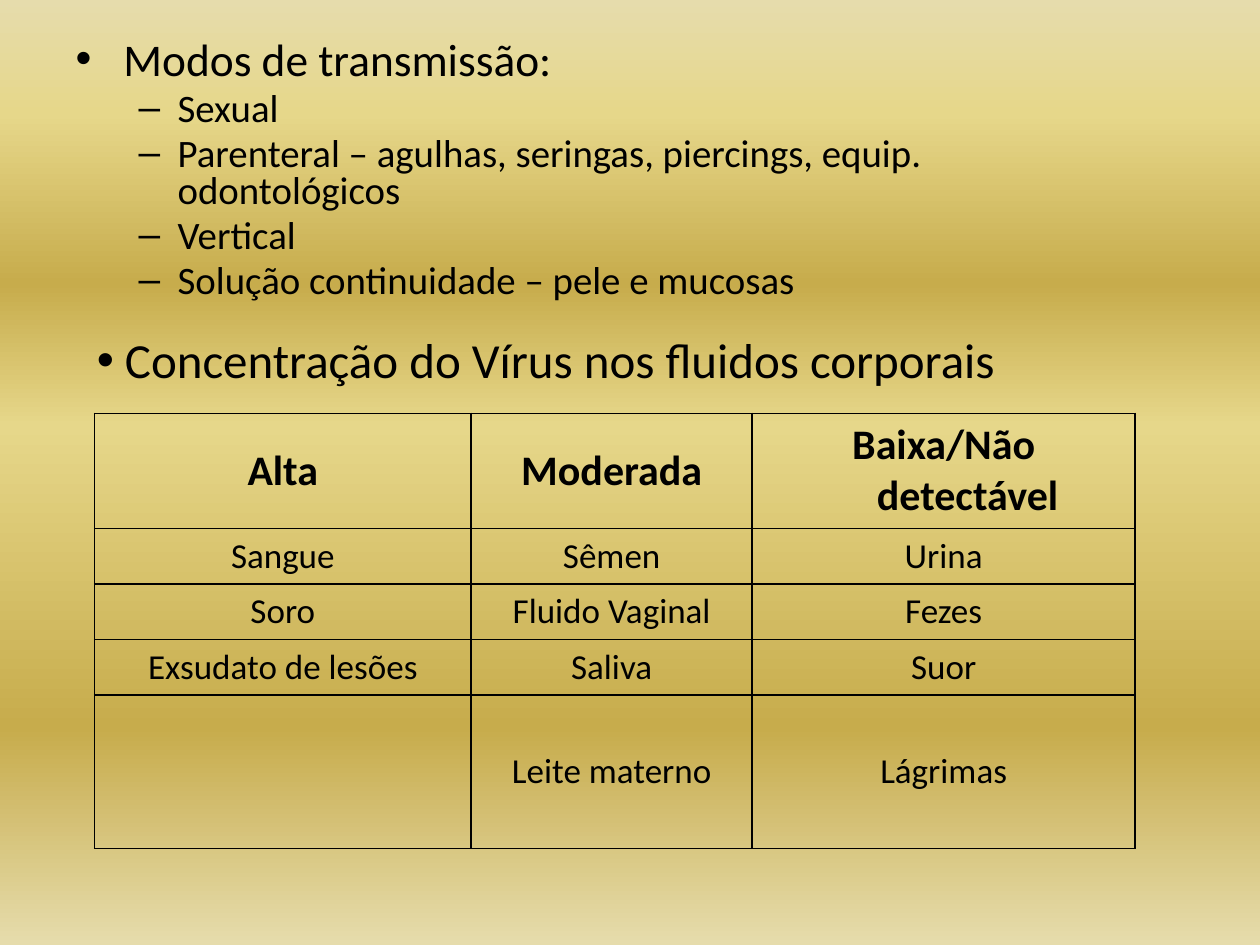
"""Build a slide on transmission routes and virus concentration in body fluids."""
from lxml import etree
from pptx import Presentation
from pptx import util as u
from pptx.dml.color import RGBColor
from pptx.enum import text
from pptx.oxml.ns import qn

COLORS = {"ink": "000000", "pale": "E6DCAC", "light": "E6D78A", "dark": "C7AC4C"}
BACKDROP = [(0, "pale"), (12, "light"), (30, "dark"), (45, "light"), (77, "dark"), (100, "pale")]
ROUTES = [
    (0, "Modos de transmissão:"),
    (1, "Sexual"),
    (1, "Parenteral – agulhas, seringas, piercings, equip. odontológicos"),
    (1, "Vertical"),
    (1, "Solução continuidade – pele e mucosas"),
]
LEVELS = [
    {"size": 25.9, "margin": 0.38, "hang": 0.38},
    {"size": 22.2, "margin": 0.81, "hang": 0.31},
]
HEADING = " Concentração do Vírus nos fluidos corporais"
FLUIDS = [
    ("Alta", "Moderada", "Baixa/Não detectável"),
    ("Sangue", "Sêmen", "Urina"),
    ("Soro", "Fluido Vaginal", "Fezes"),
    ("Exsudato de lesões", "Saliva", "Suor"),
    ("", "Leite materno", "Lágrimas"),
]
COLUMNS = [2.99, 2.23, 3.04]
ROWS = [0.91, 0.44, 0.44, 0.44, 1.22]


def style(paragraph, size, bold=False):
    for name, value in {"name": "Calibri", "size": u.Pt(size), "bold": bold}.items():
        setattr(paragraph.font, name, value)
    paragraph.font.color.rgb = RGBColor.from_string(COLORS["ink"])


def indent(paragraph, margin, hang):
    props = paragraph._p.get_or_add_pPr()
    props.set("marL", str(u.Inches(margin)))
    props.set("indent", str(-u.Inches(hang)))
    return props


def add_color(parent, color):
    etree.SubElement(parent, qn("a:srgbClr"), val=COLORS[color])


def paint_backdrop(slide):
    fill = slide.background.fill
    fill.gradient()
    fill.gradient_angle = 270
    stops = slide.element.find(".//" + qn("a:gsLst"))
    for stop in list(stops):
        stops.remove(stop)
    for share, color in BACKDROP:
        add_color(etree.SubElement(stops, qn("a:gs"), pos=str(share * 1000)), color)


def add_routes(slide):
    slide.shapes.title.element.getparent().remove(slide.shapes.title.element)
    body = slide.placeholders[1]
    box = {"left": 0.5, "top": 0.28, "width": 8.75, "height": 1.97}
    for side, length in box.items():
        setattr(body, side, u.Inches(length))
    frame = body.text_frame
    frame.auto_size = text.MSO_AUTO_SIZE.NONE
    frame.text = "\n".join(route for _, route in ROUTES)
    for paragraph, (level, _) in zip(frame.paragraphs, ROUTES):
        look = LEVELS[level]
        paragraph.level = level
        paragraph.line_spacing = 0.8
        paragraph.space_before = u.Pt(round(look["size"] * 0.2, 1))
        indent(paragraph, look["margin"], look["hang"])
        style(paragraph, look["size"])


def add_heading(slide):
    frame = slide.shapes.add_textbox(*map(u.Inches, (0.67, 2.57, 7.95, 0.57))).text_frame
    frame.word_wrap = True
    paragraph = frame.paragraphs[0]
    paragraph.text = HEADING
    style(paragraph, 28)
    props = indent(paragraph, 0, 0)
    bullet_font = etree.Element(qn("a:buFont"), typeface="Arial")
    bullet = etree.Element(qn("a:buChar"), char="•")
    props.insert(0, bullet_font)
    props.insert(1, bullet)


def outline(cell):
    props = cell._tc.get_or_add_tcPr()
    for place, side in enumerate(("lnL", "lnR", "lnT", "lnB")):
        line = etree.Element(qn("a:" + side), w=str(u.Pt(1)))
        add_color(etree.SubElement(line, qn("a:solidFill")), "ink")
        props.insert(place, line)


def add_fluids(slide):
    area = map(u.Inches, (0.75, 3.28, sum(COLUMNS), sum(ROWS)))
    table = slide.shapes.add_table(len(ROWS), len(COLUMNS), *area).table
    table.first_row = table.horz_banding = False
    for column, width in zip(table.columns, COLUMNS):
        column.width = u.Inches(width)
    for r, (names, height) in enumerate(zip(FLUIDS, ROWS)):
        table.rows[r].height = u.Inches(height)
        for c, name in enumerate(names):
            cell = table.cell(r, c)
            cell.text = name
            cell.vertical_anchor = text.MSO_ANCHOR.MIDDLE
            cell.fill.background()
            outline(cell)
            paragraph = cell.text_frame.paragraphs[0]
            paragraph.alignment = text.PP_ALIGN.CENTER
            indent(paragraph, 0.38, 0.38)
            style(paragraph, 20 if r else 24, bold=r == 0)


def main():
    deck = Presentation()
    deck.slide_width, deck.slide_height = u.Inches(10), u.Inches(7.5)
    slide = deck.slides.add_slide(deck.slide_layouts[1])
    paint_backdrop(slide)
    add_routes(slide)
    add_fluids(slide)
    add_heading(slide)
    deck.save("out.pptx")


if __name__ == "__main__":
    main()
